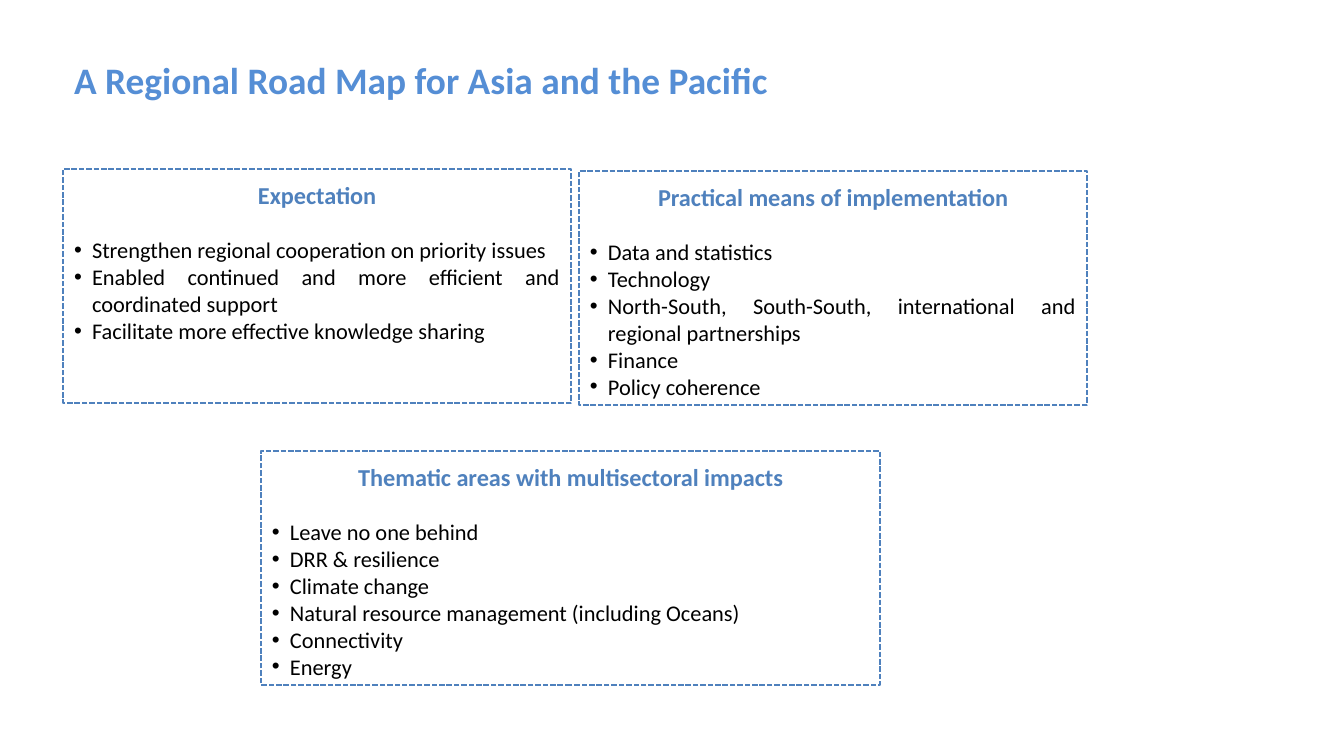
from dataclasses import dataclass

from lxml.etree import SubElement
from pptx import Presentation
from pptx.dml.color import RGBColor
from pptx.enum.dml import MSO_LINE
from pptx.enum.shapes import MSO_SHAPE
from pptx.enum.text import MSO_ANCHOR, PP_ALIGN
from pptx.oxml.ns import qn
from pptx.util import Emu, Pt


@dataclass(frozen=True)
class Theme:
    font: str = "Calibri"
    title: RGBColor = RGBColor(0x55, 0x8E, 0xD5)
    accent: RGBColor = RGBColor(0x4F, 0x81, 0xBD)
    text: RGBColor = RGBColor(0, 0, 0)
    panel: RGBColor = RGBColor(255, 255, 255)
    title_size: int = 20
    heading_size: int = 13
    body_size: int = 12
    heading_gap: float = 14.6


THEME = Theme()
EMU_PER_PX = 914400 / 134.4
INSET = 11
INDENT = 18
PANEL_HEIGHT = 234

PANELS = [
    ((63, 169, 508), "Expectation", [
        ("Strengthen regional cooperation on priority issues", PP_ALIGN.LEFT),
        ("Enabled continued and more efficient and coordinated support", PP_ALIGN.JUSTIFY),
        ("Facilitate more effective knowledge sharing", PP_ALIGN.JUSTIFY),
    ]),
    ((579, 171, 508), "Practical means of implementation", [
        ("Data and statistics", PP_ALIGN.LEFT),
        ("Technology", PP_ALIGN.LEFT),
        ("North-South, South-South, international and regional partnerships", PP_ALIGN.JUSTIFY),
        ("Finance", PP_ALIGN.LEFT),
        ("Policy coherence", PP_ALIGN.LEFT),
    ]),
    ((261, 451, 619), "Thematic areas with multisectoral impacts", [
        ("Leave no one behind", PP_ALIGN.LEFT),
        ("DRR & resilience", PP_ALIGN.LEFT),
        ("Climate change", PP_ALIGN.LEFT),
        ("Natural resource management (including Oceans)", PP_ALIGN.LEFT),
        ("Connectivity", PP_ALIGN.LEFT),
        ("Energy", PP_ALIGN.LEFT),
    ]),
]


def px(value):
    return Emu(round(value * EMU_PER_PX))


def set_frame(tf, anchor):
    tf.word_wrap = True
    tf.vertical_anchor = anchor
    tf.margin_left = tf.margin_right = px(INSET)
    tf.margin_top = tf.margin_bottom = px(INSET)


def write(p, text, size, color, bold=False, align=PP_ALIGN.LEFT):
    p.text = text
    p.alignment = align
    for r in p.runs:
        r.font.name = THEME.font
        r.font.size = Pt(size)
        r.font.bold = bold
        r.font.color.rgb = color


def add_bullet(p):
    pPr = p._p.get_or_add_pPr()
    pPr.set("marL", str(px(INDENT)))
    pPr.set("indent", str(-px(INDENT)))
    SubElement(pPr, qn("a:buFont"), typeface="Arial")
    SubElement(pPr, qn("a:buChar"), char="•")


def add_title(s, text):
    tf = s.shapes.add_textbox(px(63), px(48), px(1176), px(63)).text_frame
    set_frame(tf, MSO_ANCHOR.MIDDLE)
    write(tf.paragraphs[0], text, THEME.title_size, THEME.title, bold=True)


def add_panel(s, place, heading, items):
    left, top, width = place
    sp = s.shapes.add_shape(
        MSO_SHAPE.RECTANGLE, px(left), px(top), px(width), px(PANEL_HEIGHT)
    )
    sp.shadow.inherit = False
    sp.fill.solid()
    sp.fill.fore_color.rgb = THEME.panel
    sp.line.color.rgb = THEME.accent
    sp.line.width = Pt(1)
    sp.line.dash_style = MSO_LINE.SQUARE_DOT
    tf = sp.text_frame
    set_frame(tf, MSO_ANCHOR.TOP)
    p = tf.paragraphs[0]
    write(p, heading, THEME.heading_size, THEME.accent, bold=True, align=PP_ALIGN.CENTER)
    p.space_after = Pt(THEME.heading_gap)
    for text, align in items:
        p = tf.add_paragraph()
        add_bullet(p)
        write(p, text, THEME.body_size, THEME.text, align=align)


def main():
    prs = Presentation()
    prs.slide_width, prs.slide_height = px(1344), px(756)
    s = prs.slides.add_slide(prs.slide_layouts[6])
    add_title(s, "A Regional Road Map for Asia and the Pacific")
    for place, heading, items in PANELS:
        add_panel(s, place, heading, items)
    prs.save("out.pptx")


if __name__ == "__main__":
    main()
